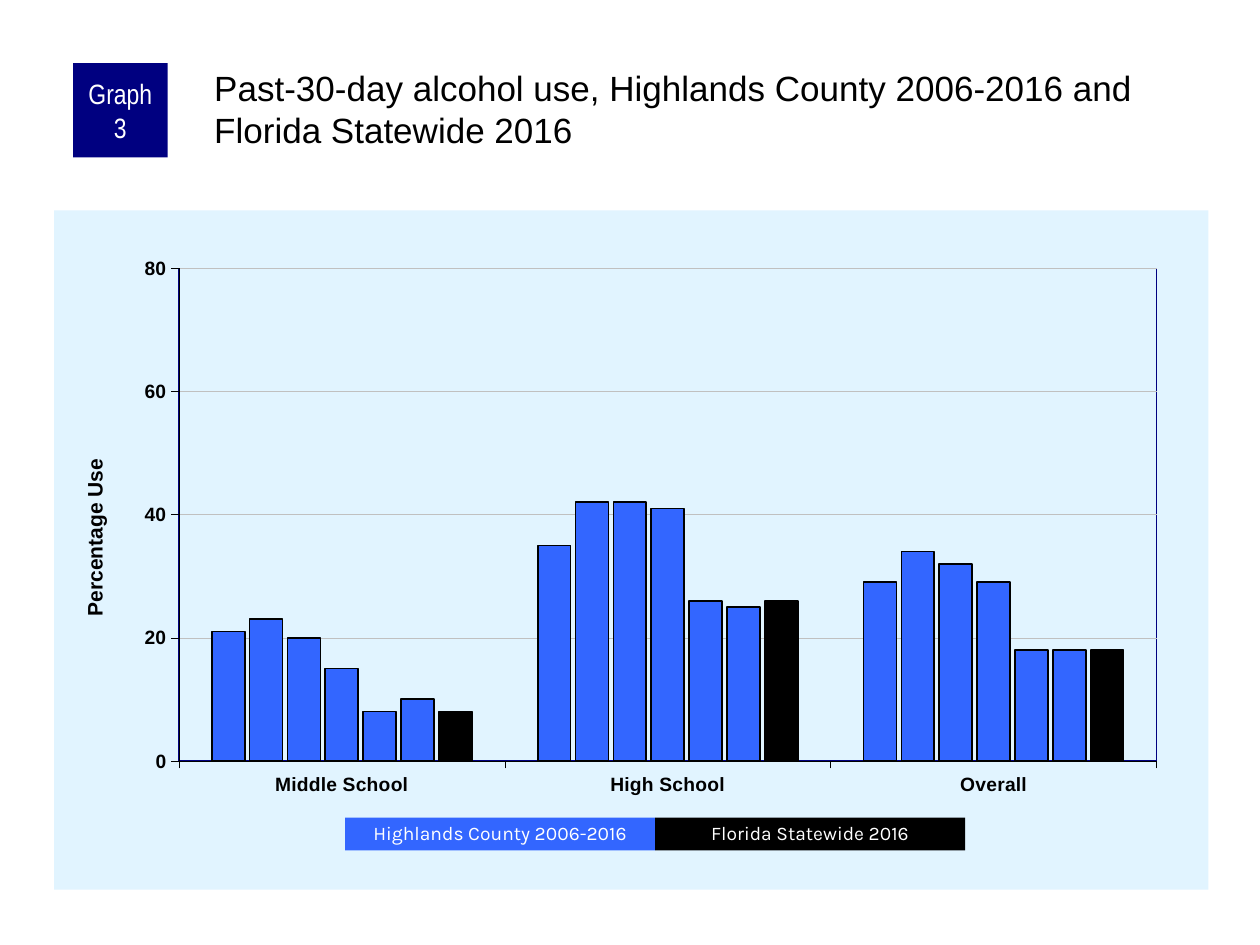
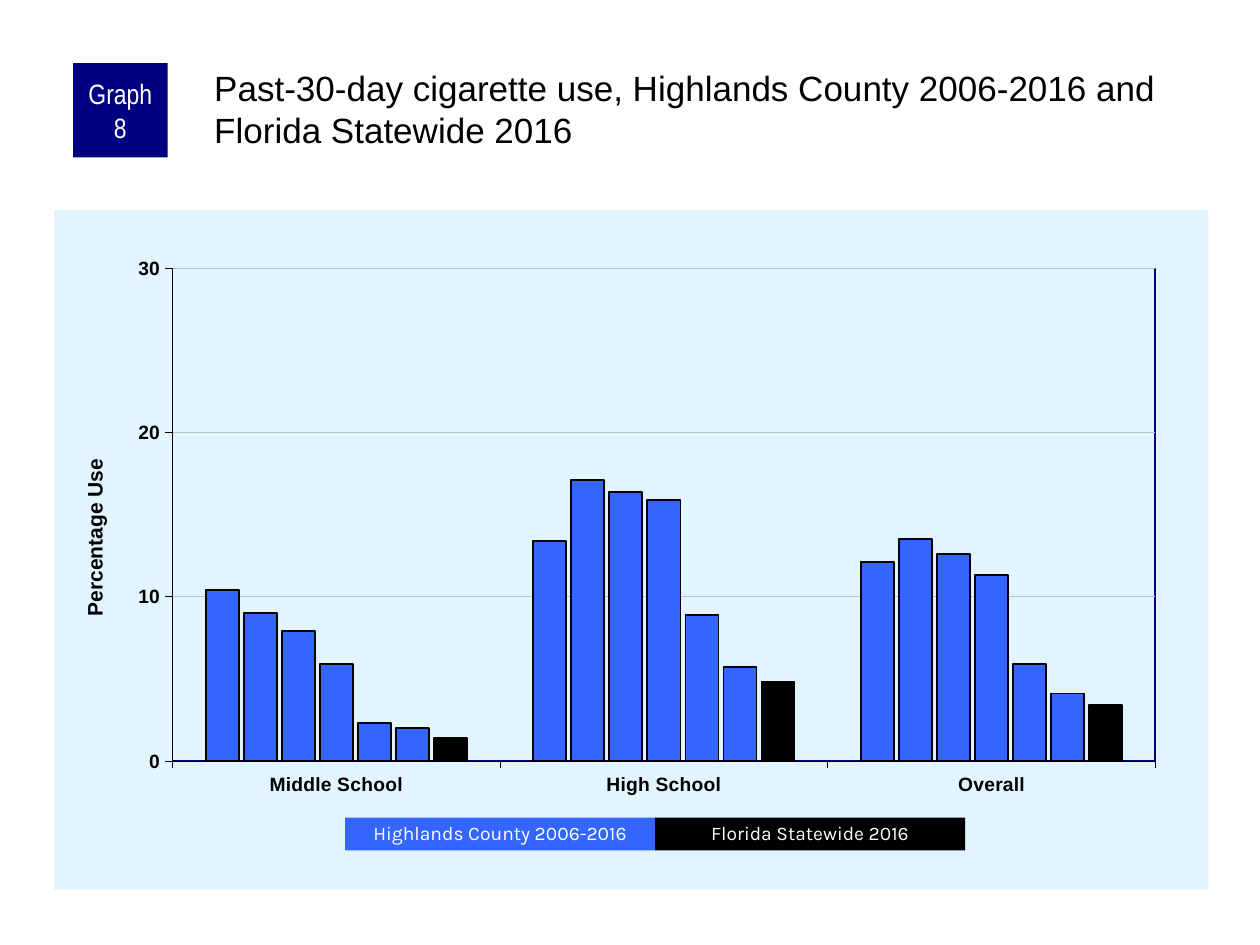
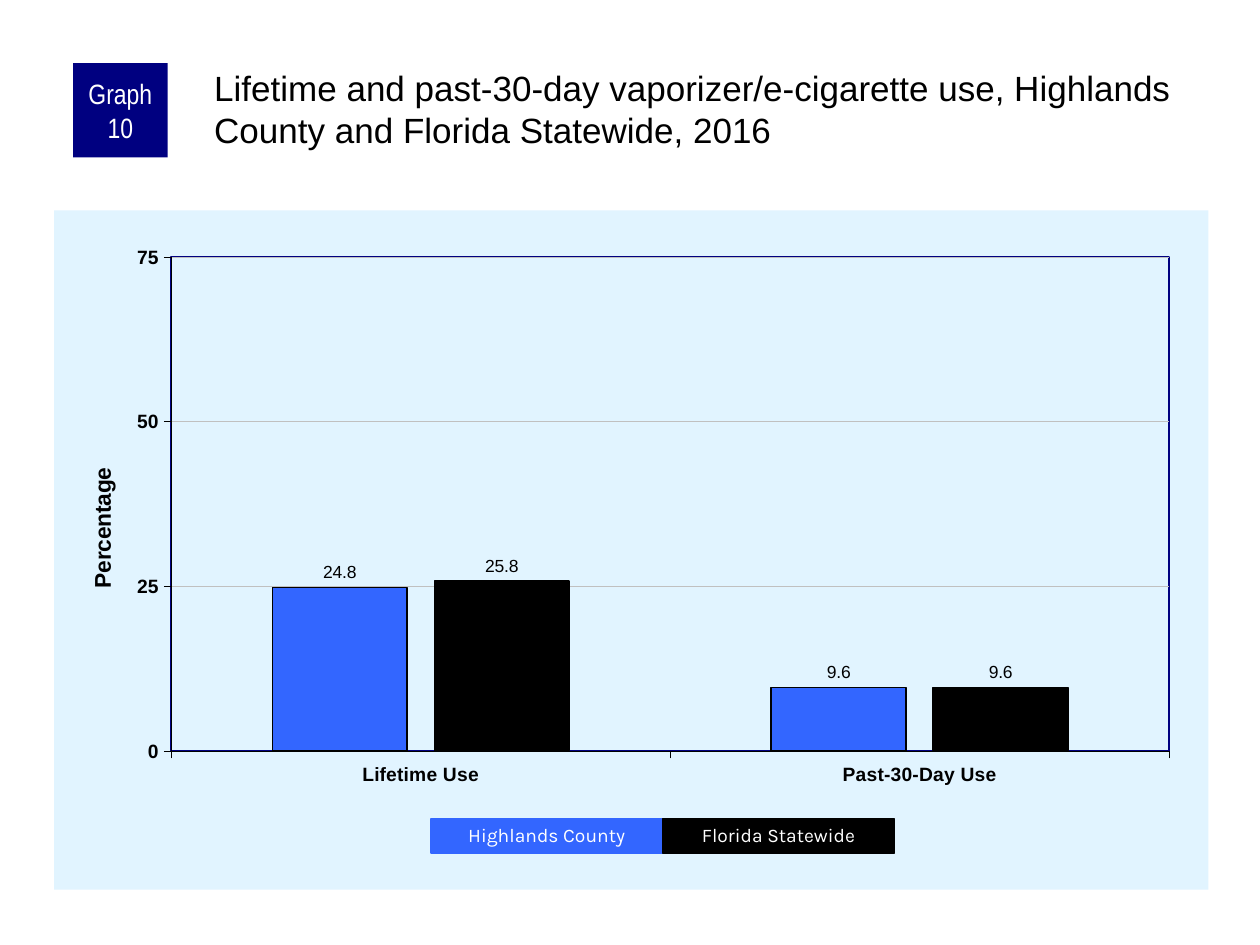
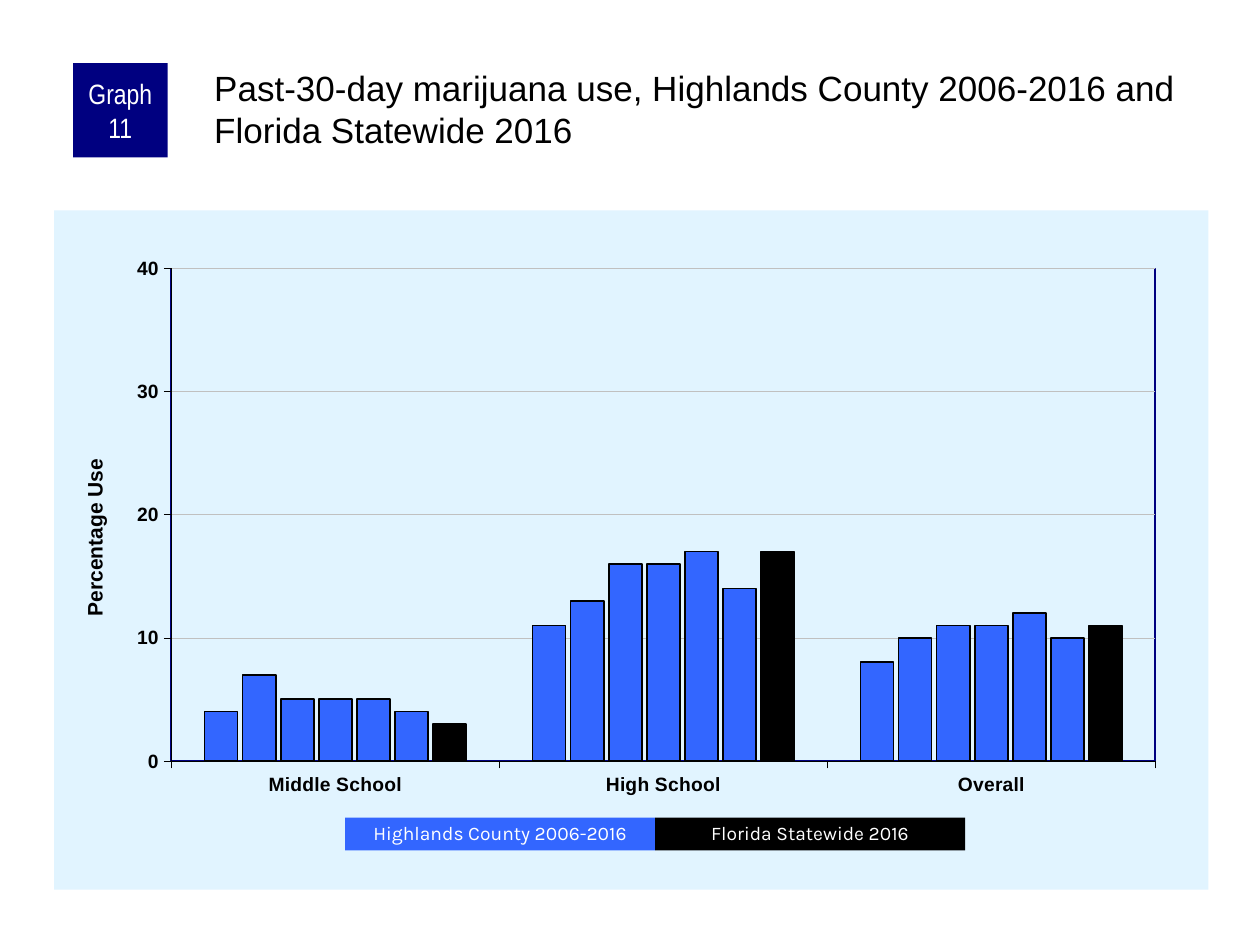
from dataclasses import dataclass

from lxml.etree import SubElement
from pptx import Presentation
from pptx.chart.data import CategoryChartData
from pptx.dml.color import RGBColor
from pptx.enum.chart import XL_CHART_TYPE as ChartType
from pptx.enum.chart import XL_LABEL_POSITION as LabelPos
from pptx.enum.chart import XL_TICK_MARK as Tick
from pptx.enum.shapes import MSO_SHAPE as Preset
from pptx.enum.text import MSO_ANCHOR as Anchor
from pptx.enum.text import MSO_AUTO_SIZE as AutoSize
from pptx.enum.text import PP_ALIGN as Align
from pptx.oxml import parse_xml
from pptx.oxml.ns import nsdecls, qn
from pptx.util import Inches, Pt


@dataclass(frozen=True)
class Theme:
    white: str = "FFFFFF"
    black: str = "000000"
    navy: str = "000080"
    county: str = "3366FF"
    state: str = "000000"
    panel: str = "E1F4FF"
    grid: str = "C0C0C0"
    body_font: str = "Arial"
    badge_font: str = "Arial Narrow"
    legend_font: str = "Karla"
    title_size: float = 20
    badge_size: float = 16
    axis_size: float = 11
    legend_size: float = 11
    label_size: float = 10
    hairline: float = 0.25
    border: float = 1


@dataclass(frozen=True)
class Frame:
    left: float
    top: float
    width: float
    height: float

    def emu(self) -> tuple:
        return tuple(Inches(v) for v in (self.left, self.top, self.width, self.height))


@dataclass(frozen=True)
class Legend:
    names: tuple
    first: Frame
    line: float = 0


@dataclass(frozen=True)
class Graph:
    number: int
    title: str
    categories: tuple
    series: tuple
    maximum: int
    step: int
    plot: Frame
    legend: Legend
    axis_title: str = "Percentage Use"
    axis_title_size: float = 12
    axis_title_at: tuple = (0.19, 1.94)
    gap: int = 200
    overlap: int = -15
    labels: bool = False
    state_line: float = 1


T = Theme()
CHART = Frame(0.43, 1.67, 9.16, 5.39)
BADGE = Frame(0.58, 0.5, 0.75, 0.75)
TITLE = Frame(1.67, 0.5, 7.92, 0.83)
SCHOOLS = ("Middle School", "High School", "Overall")
TREND_LEGEND = Legend(("Highlands County 2006-2016", "Florida Statewide 2016"),
                      Frame(2.74, 6.49, 2.46, 0.26))


def trend_title(substance: str) -> str:
    return (f"Past-30-day {substance} use, Highlands County 2006-2016 "
            "and Florida Statewide 2016")


GRAPHS = (
    Graph(3, trend_title("alcohol"), SCHOOLS,
          ((21, 35, 29), (23, 42, 34), (20, 42, 32), (15, 41, 29),
           (8, 26, 18), (10, 25, 18), (8, 26, 18)),
          80, 20, Frame(0.99, 0.46, 7.76, 3.91), TREND_LEGEND),
    Graph(8, trend_title("cigarette"), SCHOOLS,
          ((10.4, 13.4, 12.1), (9, 17.1, 13.5), (7.9, 16.4, 12.6), (5.9, 15.9, 11.3),
           (2.3, 8.9, 5.9), (2, 5.7, 4.1), (1.4, 4.8, 3.4)),
          30, 10, Frame(0.94, 0.46, 7.8, 3.91), TREND_LEGEND),
    Graph(10, "Lifetime and past-30-day vaporizer/e-cigarette use, "
              "Highlands County and Florida Statewide, 2016",
          ("Lifetime Use", "Past-30-Day Use"), ((24.8, 9.6), (25.8, 9.6)),
          75, 25, Frame(0.93, 0.37, 7.92, 3.92),
          Legend(("Highlands County", "Florida Statewide"),
                 Frame(3.42, 6.5, 1.84, 0.27), line=0.75),
          axis_title="Percentage", axis_title_size=13, axis_title_at=(0.24, 2.01),
          gap=150, overlap=-20, labels=True, state_line=0.75),
    Graph(11, trend_title("marijuana"), SCHOOLS,
          ((4, 11, 8), (7, 13, 10), (5, 16, 11), (5, 16, 11),
           (5, 17, 12), (4, 14, 10), (3, 17, 11)),
          40, 10, Frame(0.93, 0.46, 7.81, 3.91), TREND_LEGEND),
)


def rgb(color: str) -> RGBColor:
    return RGBColor.from_string(color)


def set_font(font, name: str, size: float, color: str, bold: bool = False) -> None:
    font.name, font.size, font.bold = name, Pt(size), bold
    font.color.rgb = rgb(color)


def set_line(line, color: str, width: float) -> None:
    line.color.rgb = rgb(color)
    line.width = Pt(width)


def set_fill(fill, color: str) -> None:
    fill.solid()
    fill.fore_color.rgb = rgb(color)


def add_box(s, frame: Frame, text: str, fill: str, font: str, size: float,
            line: float = 0):
    sp = s.shapes.add_shape(Preset.RECTANGLE, *frame.emu())
    sp.shadow.inherit = False
    set_fill(sp.fill, fill)
    if line:
        set_line(sp.line, fill, line)
    else:
        sp.line.fill.background()
    tf = sp.text_frame
    tf.word_wrap = True
    tf.vertical_anchor = Anchor.MIDDLE
    p = tf.paragraphs[0]
    p.alignment = Align.CENTER
    r = p.add_run()
    r.text = text
    set_font(r.font, font, size, T.white)
    return sp


def add_title(s, text: str) -> None:
    sp = s.shapes.title
    sp.left, sp.top, sp.width, sp.height = TITLE.emu()
    tf = sp.text_frame
    tf.word_wrap = True
    tf.auto_size = AutoSize.NONE
    tf.vertical_anchor = Anchor.TOP
    tf.margin_left = tf.margin_top = Inches(0.03)
    tf.margin_right = tf.margin_bottom = 0
    p = tf.paragraphs[0]
    p.alignment = Align.LEFT
    r = p.add_run()
    r.text = text
    set_font(r.font, T.body_font, T.title_size, T.black)


def add_badge(s, number: int) -> None:
    sp = add_box(s, BADGE, f"Graph {number}", T.navy, T.badge_font, T.badge_size)
    tf = sp.text_frame
    tf.margin_left = tf.margin_right = Inches(0.05)
    tf.margin_top = tf.margin_bottom = 0


def add_legend(s, legend: Legend) -> None:
    first = legend.first
    for i, (name, color) in enumerate(zip(legend.names, (T.county, T.state))):
        frame = Frame(first.left + i * first.width, first.top, first.width, first.height)
        sp = add_box(s, frame, name, color, T.legend_font, T.legend_size, legend.line)
        sp.text_frame.paragraphs[0].line_spacing = 0.9


def place(parent, index: int, values: dict) -> None:
    old = parent.find(qn("c:layout"))
    if old is not None:
        parent.remove(old)
    layout = parse_xml(f"<c:layout {nsdecls('c')}><c:manualLayout/></c:layout>")
    for tag, value in values.items():
        SubElement(layout[0], qn(f"c:{tag}")).set("val", str(value))
    parent.insert(index, layout)


def shape_props(fill: str, line: str):
    return parse_xml(f"<c:spPr {nsdecls('c', 'a')}>{fill}{line}</c:spPr>")


def solid(color: str) -> str:
    return f'<a:solidFill><a:srgbClr val="{color}"/></a:solidFill>'


def style_axes(chart, g: Graph) -> None:
    for axis in (chart.category_axis, chart.value_axis):
        axis.major_tick_mark, axis.minor_tick_mark = Tick.OUTSIDE, Tick.NONE
        set_font(axis.tick_labels.font, T.body_font, T.axis_size, T.black, True)
        set_line(axis.format.line, T.black, T.hairline)
    axis = chart.value_axis
    axis.minimum_scale, axis.maximum_scale, axis.major_unit = 0, g.maximum, g.step
    axis.has_major_gridlines = True
    set_line(axis.major_gridlines.format.line, T.grid, T.hairline)
    r = axis.axis_title.text_frame.paragraphs[0].add_run()
    r.text = g.axis_title
    set_font(r.font, T.body_font, g.axis_title_size, T.black, True)
    title = axis.axis_title.element
    body = next(title.iter(qn("a:bodyPr")))
    body.set("rot", "-5400000")
    body.set("vert", "horz")
    left, top = g.axis_title_at
    place(title, 1, {"xMode": "edge", "yMode": "edge",
                     "x": left / CHART.width, "y": top / CHART.height})


def style_series(plot, g: Graph) -> None:
    plot.gap_width, plot.overlap, plot.vary_by_categories = g.gap, g.overlap, False
    last = len(g.series) - 1
    for i, series in enumerate(plot.series):
        set_fill(series.format.fill, T.state if i == last else T.county)
        set_line(series.format.line, T.black, g.state_line if i == last else T.border)
        if g.labels:
            labels = series.data_labels
            labels.show_value = True
            labels.position = LabelPos.OUTSIDE_END
            labels.number_format, labels.number_format_is_linked = "0.0", False
            set_font(labels.font, T.body_font, T.label_size, T.black)


def add_graph(s, g: Graph) -> None:
    data = CategoryChartData()
    data.categories = g.categories
    for i, values in enumerate(g.series, 1):
        data.add_series(f"Series {i}", values)
    chart = s.shapes.add_chart(ChartType.COLUMN_CLUSTERED, *CHART.emu(), data).chart
    chart.has_legend = chart.has_title = False
    set_font(chart.font, T.body_font, T.label_size, T.black)
    style_axes(chart, g)
    style_series(chart.plots[0], g)
    root = chart.element.find(qn("c:chart"))
    root.addnext(shape_props(solid(T.panel), "<a:ln><a:noFill/></a:ln>"))
    area = root.find(qn("c:plotArea"))
    place(area, 0, {"layoutTarget": "inner", "xMode": "edge", "yMode": "edge",
                    "x": g.plot.left / CHART.width, "y": g.plot.top / CHART.height,
                    "w": g.plot.width / CHART.width, "h": g.plot.height / CHART.height})
    border = f'<a:ln w="{Pt(T.border)}">{solid(T.navy)}</a:ln>'
    area.append(shape_props("<a:noFill/>", border))


def main() -> None:
    prs = Presentation()
    prs.slide_width, prs.slide_height = Inches(10), Inches(7.5)
    for g in GRAPHS:
        s = prs.slides.add_slide(prs.slide_layouts[5])
        add_graph(s, g)
        add_badge(s, g.number)
        add_title(s, g.title)
        add_legend(s, g.legend)
    prs.save("out.pptx")


if __name__ == "__main__":
    main()
